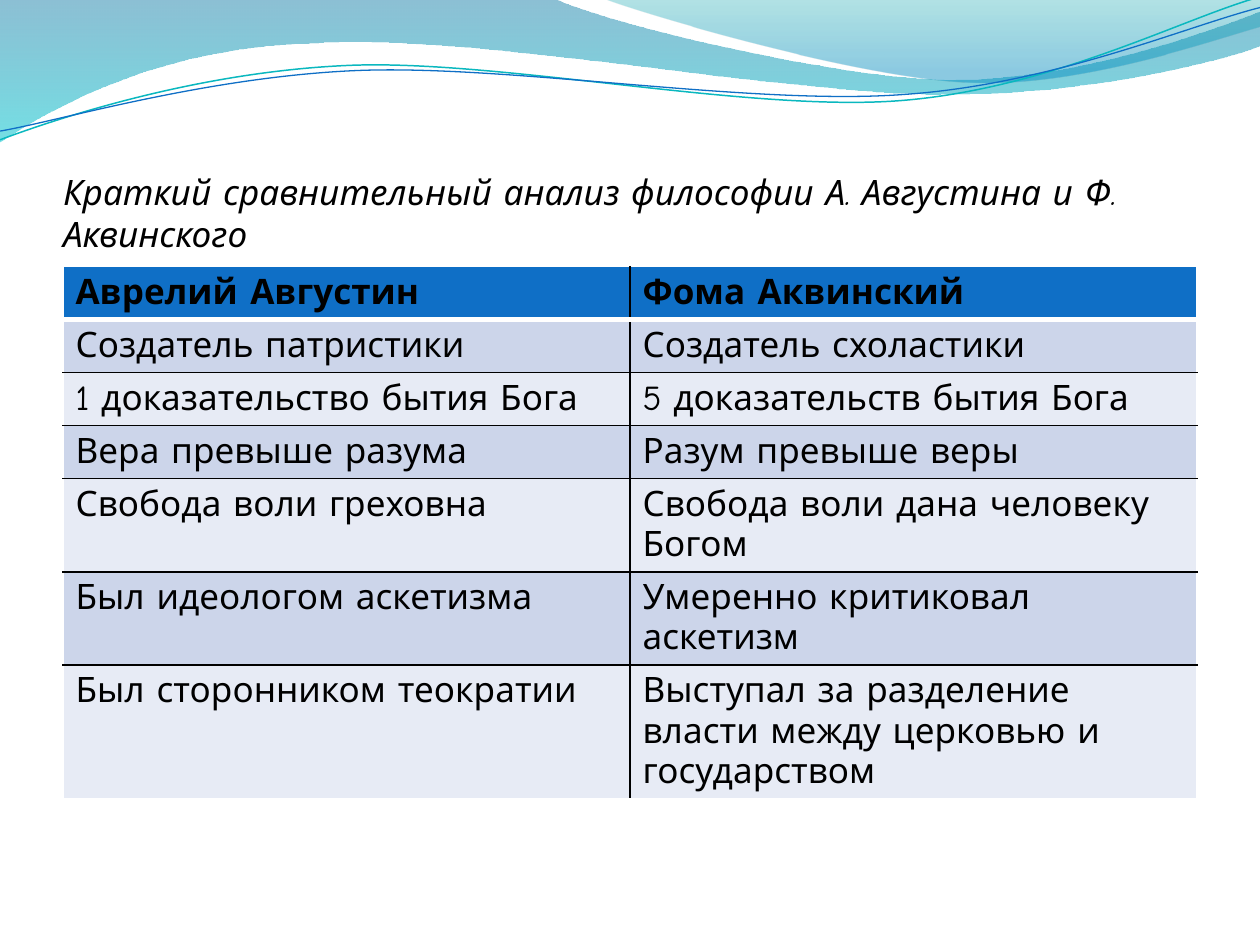
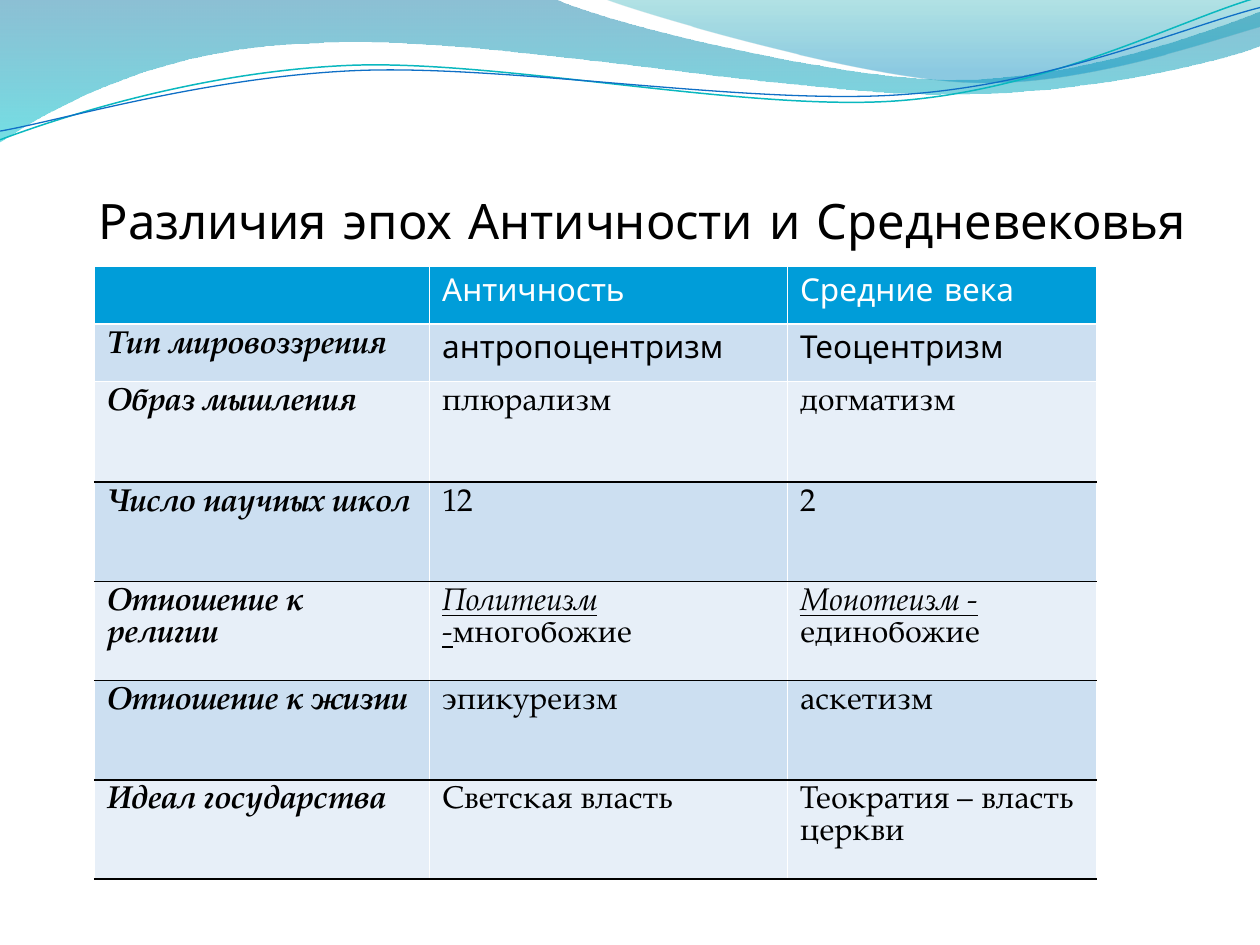
from lxml.etree import SubElement
from pptx import Presentation
from pptx.dml.color import RGBColor
from pptx.enum.text import MSO_ANCHOR as Anchor, MSO_AUTO_SIZE as AutoSize, PP_ALIGN as Align
from pptx.oxml.ns import qn
from pptx.util import Pt

BLACK, WHITE = "000000", "FFFFFF"
SANS, SERIF = "Comic Neue", "TeX Gyre Pagella"

WAVES = [
    ([[(0, 0)], [(316.8, -0.7)], [(342.7, 12.2), (478.1, 45.4), (545.8, 45.4)],
      [(614.2, 45.4), (689.8, 18.7), (720, 6.5)], [(720.7, 25.9)],
      [(707.8, 31.7), (626.4, 54.7), (537.1, 54)],
      [(447.8, 54), (275, 20.2), (185, 24.5)],
      [(92.9, 25.9), (33.1, 59.8), (-0.7, 81.4)]],
     [(0, "0074A1", 45), (1, "00C6CF", 55)]),
    ([[(344.9, -0.7)], [(366.5, 7.9), (491, 44.6), (553.7, 46.8)],
      [(616.3, 49.7), (691.9, 23), (720, 15.1)], [(720, 0)]],
     [(0, "00A1A9", 30), (0.8, "008BBF", 45)]),
]
STRANDS = [
    ([[(0, 79.9)], [(34.6, 67), (113.8, 41), (199.4, 37.4)],
      [(284.4, 33.8), (427, 64.1), (513.4, 57.6)],
      [(599.8, 51.1), (675.4, 10.8), (718.6, -1.4)]],
     "0AB8BF", 0.85),
    ([[(0, 74.9)], [(33.8, 69.1), (118.1, 43.9), (203.8, 40.3)],
      [(290.2, 36.7), (429.8, 60.5), (516.2, 54)],
      [(601.9, 48.2), (677.5, 15.1), (720, 4.3)]],
     "0F6FC6", 0.75),
]

THINKERS = [
    ("Аврелий Августин", "Фома Аквинский"),
    ("Создатель патристики", "Создатель схоластики"),
    ("1 доказательство бытия Бога", "5 доказательств бытия Бога"),
    ("Вера превыше разума", "Разум превыше веры"),
    ("Свобода воли греховна", "Свобода воли дана человеку Богом"),
    ("Был идеологом аскетизма", "Умеренно критиковал аскетизм"),
    ("Был сторонником теократии",
     "Выступал за разделение власти между церковью и государством"),
]
EPOCHS = [
    ("", "Античность", "Средние века"),
    ("Тип мировоззрения", "антропоцентризм", "Теоцентризм"),
    ("Образ мышления", "плюрализм", "догматизм"),
    ("Число научных школ", "12", "2"),
    ("Отношение к религии", ("Политеизм -", "многобожие"), ("Монотеизм -", " единобожие")),
    ("Отношение к жизни", "эпикуреизм", "аскетизм"),
    ("Идеал государства", "Светская власть", "Теократия – власть церкви"),
]


def color(value):
    return RGBColor.from_string(value)


def bend(shape, segments):
    track = shape.element.spPr.find(".//" + qn("a:path"))
    lines = iter(track.findall(qn("a:lnTo")))
    for segment in segments[1:]:
        first, *others = [next(lines) for _ in segment]
        if others:
            first.tag = qn("a:cubicBezTo")
            for line in others:
                first.append(line[0])
                track.remove(line)


def set_font(font, size, name, ink, bold=False, italic=False):
    font.size, font.name = Pt(size), name
    font.color.rgb = color(ink)
    font.bold, font.italic = bold, italic


def set_border(cell, side, ink, width):
    line = SubElement(cell._tc.get_or_add_tcPr(), qn(f"a:{side}"), w=str(Pt(width)))
    SubElement(SubElement(line, qn("a:solidFill")), qn("a:srgbClr"), val=ink)


class WaveDeck:
    """Builds slides that share a wave header, a title style and bordered tables."""

    def __init__(self):
        self.deck = Presentation()
        self.deck.slide_width, self.deck.slide_height = Pt(720), Pt(540)
        self.page = None

    def add_page(self, title, size, italic=False, indent=0, lift=0):
        self.page = self.deck.slides.add_slide(self.deck.slide_layouts[5])
        if len(self.deck.slides) == 1:
            self.master_header()
        self.title(title, size, italic, indent, lift)

    def master_header(self):
        shapes = [self.wave(*wave) for wave in WAVES]
        shapes += [self.strand(*strand) for strand in STRANDS]
        tree = self.deck.slide_master.shapes.element
        for number, shape in enumerate(shapes):
            shape.element.nvSpPr.cNvPr.id = 100 + number
            tree.insert(2 + number, shape.element)

    def outline(self, segments, close):
        start, *rest = [(Pt(x), Pt(y)) for segment in segments for x, y in segment]
        builder = self.page.shapes.build_freeform(*start)
        builder.add_line_segments(rest, close=close)
        shape = builder.convert_to_shape()
        bend(shape, segments)
        shape.shadow.inherit = False
        return shape

    def wave(self, segments, stops):
        shape = self.outline(segments, True)
        shape.line.fill.background()
        shape.fill.gradient()
        shape.fill.gradient_angle = 270
        for stop, (position, ink, _) in zip(shape.fill.gradient_stops, stops):
            stop.position = position
            stop.color.rgb = color(ink)
        for tint, (_, _, opacity) in zip(shape.element.spPr.iter(qn("a:srgbClr")), stops):
            SubElement(tint, qn("a:alpha"), val=str(opacity * 1000))
        return shape

    def strand(self, segments, ink, width):
        shape = self.outline(segments, False)
        shape.fill.background()
        shape.line.color.rgb = color(ink)
        shape.line.width = Pt(width)
        return shape

    def title(self, text, size, italic, indent, lift):
        box = self.page.shapes.title
        box.left, box.top, box.width, box.height = Pt(36), Pt(55.5), Pt(648), Pt(90)
        frame = box.text_frame
        frame.text = text
        frame.word_wrap, frame.auto_size = True, AutoSize.NONE
        frame.vertical_anchor = Anchor.BOTTOM
        frame.margin_left, frame.margin_top = Pt(indent), Pt(3.6)
        frame.margin_right, frame.margin_bottom = 0, Pt(lift)
        para = frame.paragraphs[0]
        para.alignment = Align.LEFT
        set_font(para.font, size, SANS, BLACK, italic=italic)

    def table(self, left, rows, widths, heights, fills, edges, divider, style):
        frame = self.page.shapes.add_table(len(rows), len(widths), Pt(left), Pt(152.3),
                                           Pt(sum(widths)), Pt(sum(heights)))
        table = frame.table
        table.first_row = table.horz_banding = False
        for column, width in zip(table.columns, widths):
            column.width = Pt(width)
        for row, height in zip(table.rows, heights):
            row.height = Pt(height)
        header, *bands = fills
        verticals = [WHITE] + [divider] * (len(widths) - 1) + [WHITE]
        for r, texts in enumerate(rows):
            for c, text in enumerate(texts):
                cell = table.cell(r, c)
                set_border(cell, "lnL", verticals[c], 1)
                set_border(cell, "lnR", verticals[c + 1], 1)
                set_border(cell, "lnT", *edges[r])
                set_border(cell, "lnB", *edges[r + 1])
                cell.fill.solid()
                cell.fill.fore_color.rgb = color(bands[(r - 1) % 2] if r else header)
                self.cell_text(cell, text, style(r, c))

    def cell_text(self, cell, text, style):
        para = cell.text_frame.paragraphs[0]
        set_font(para.font, *style)
        if isinstance(text, str):
            para.text = text
            return
        term, meaning = text
        span = para.add_run()
        span.text = term
        span.font.italic = span.font.underline = True
        para.add_run().text = meaning


def thinker_style(row, column):
    return 20, SANS, BLACK, row == 0


def epoch_style(row, column):
    if row == 0:
        return 18, SANS, WHITE
    if column == 0:
        return 18, SERIF, BLACK, True, True
    return 18, SANS if row == 1 else SERIF, BLACK


def main():
    waves = WaveDeck()
    thin_white, thin_black = (WHITE, 1), (BLACK, 1)
    waves.add_page("Краткий сравнительный анализ философии А. Августина и Ф. Аквинского",
                   20, italic=True)
    waves.table(36, THINKERS, [324, 324], [29.2] * 6 + [42.5],
                ("0F6FC6", "CCD5EA", "E7EBF5"),
                [thin_white, (WHITE, 3)] + [thin_black] * 5 + [thin_white],
                BLACK, thinker_style)
    waves.add_page("Различия эпох Античности и Средневековья", 27.9, indent=20.5, lift=3.2)
    waves.table(54, EPOCHS, [191.5, 204.5, 176.5], [32.8, 32.8, 57.6] + [56.7] * 4,
                ("009DD9", "CCDFF1", "E7EFF8"),
                [thin_white] * 3 + [thin_black] * 5,
                WHITE, epoch_style)
    waves.deck.save("out.pptx")


if __name__ == "__main__":
    main()
